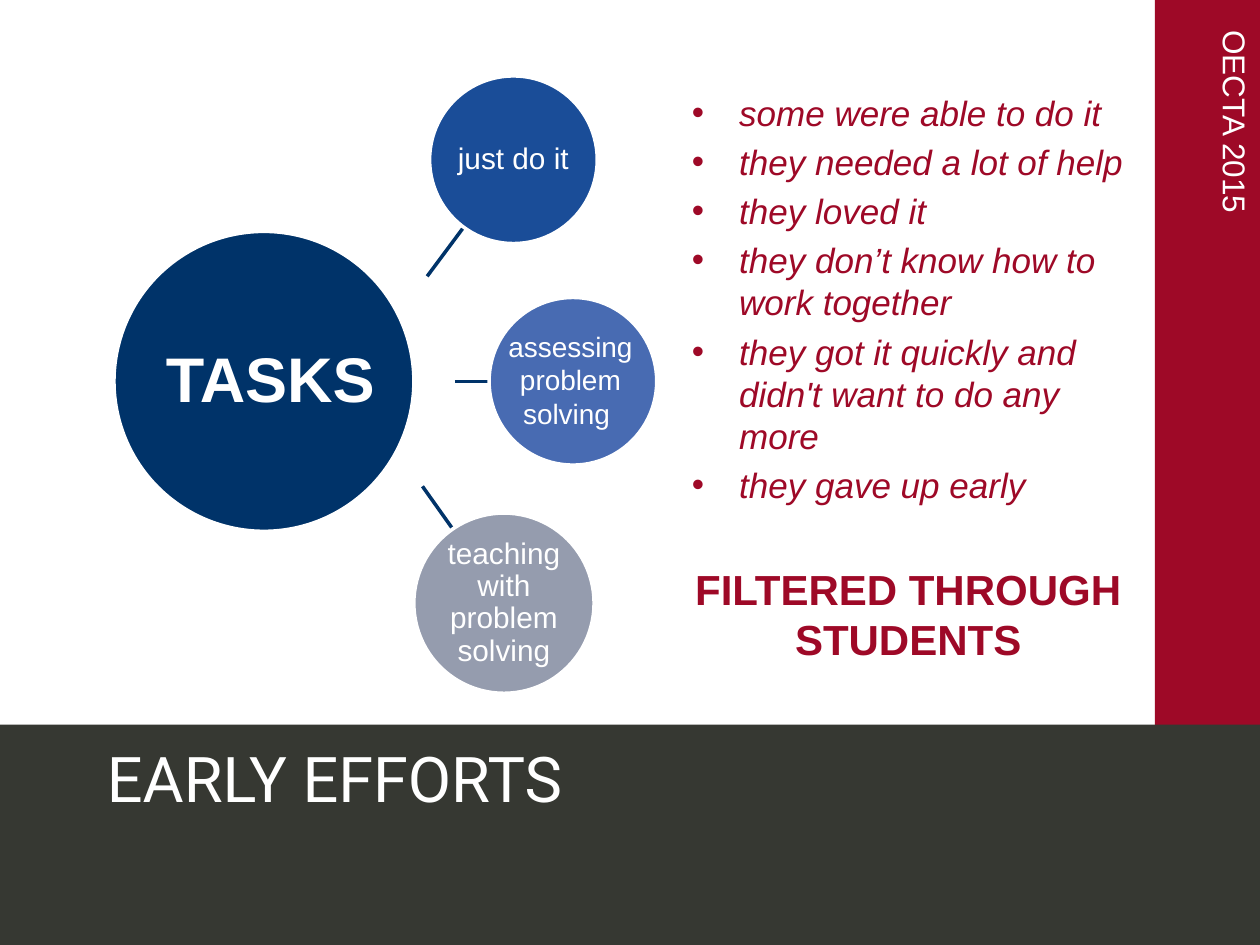
"""Build the "Early efforts" slide: a task hub with three satellites and a bullet list."""
from dataclasses import dataclass, field
from typing import Any, Optional

from lxml import etree
from pptx import Presentation
from pptx.dml.color import RGBColor
from pptx.enum.shapes import MSO_CONNECTOR, MSO_SHAPE
from pptx.enum.text import MSO_ANCHOR, PP_ALIGN
from pptx.oxml.ns import qn
from pptx.util import Pt

RECTANGLE, OVAL = MSO_SHAPE.RECTANGLE, MSO_SHAPE.OVAL
STRAIGHT = MSO_CONNECTOR.STRAIGHT
TOP, MIDDLE = MSO_ANCHOR.TOP, MSO_ANCHOR.MIDDLE
LEFT, CENTER = PP_ALIGN.LEFT, PP_ALIGN.CENTER

WHITE = RGBColor(0xFF, 0xFF, 0xFF)
CRIMSON = RGBColor(0x9E, 0x09, 0x27)
CHARCOAL = RGBColor(0x36, 0x38, 0x32)
NAVY = RGBColor(0x00, 0x33, 0x69)
ROYAL = RGBColor(0x1A, 0x4D, 0x98)
STEEL = RGBColor(0x48, 0x6B, 0xB2)
GREY = RGBColor(0x95, 0x9C, 0xAE)

INDENT = 27


@dataclass
class Line:
    text: str
    size: float
    color: RGBColor = WHITE
    name: str = "Arial"
    bold: bool = False
    italic: bool = False
    bullet: bool = False
    layout: dict[str, Any] = field(default_factory=dict)


@dataclass
class Label:
    left: float
    top: float
    width: float
    height: float
    lines: list[Line]
    anchor: Any = TOP
    inset: float = 7.2
    rotation: float = 0


@dataclass
class Circle:
    left: float
    top: float
    diameter: float
    fill: RGBColor
    text: Optional[str] = None


@dataclass
class Spoke:
    x1: float
    y1: float
    x2: float
    y2: float


CIRCLES = [
    Circle(65.1, 132.2, 171.4, NAVY),
    Circle(245.5, 43.4, 95.8, ROYAL, "just do it"),
    Circle(279.5, 170, 95.8, STEEL),
    Circle(236.5, 293.2, 103, GREY, "teaching with problem solving"),
]
SPOKES = [
    Spoke(241.4, 277.9, 258.3, 301.7),
    Spoke(259.9, 218, 279.2, 218),
    Spoke(244.1, 157.9, 265, 129.8),
]
REMARKS = [
    "some were able to do it",
    "they needed a lot of help",
    "they loved it",
    "they don’t know how to work together",
    "they got it quickly and didn't want to do any more",
    "they gave up early",
]
REMARK_LINES = [
    Line(remark, 20, CRIMSON, italic=True, bullet=True,
         layout={"space_before": Pt(4 if index else 0)})
    for index, remark in enumerate(REMARKS)
]
CONCLUSION = Line("FILTERED THROUGH STUDENTS", 24, CRIMSON, bold=True,
                  layout={"alignment": CENTER, "space_before": Pt(33.2)})
LABELS = [
    Label(565.2, 126, 281.5, 28.8, [Line("OECTA 2015", 18)], inset=17.6, rotation=90),
    Label(54, 414.5, 642.2, 59.8, [Line("EARLY EFFORTS", 36, name="Roboto")], MIDDLE),
    Label(87.8, 190.5, 141.8, 51.1, [Line("TASKS", 36, bold=True)]),
    Label(388.3, 49, 261.4, 377.3, REMARK_LINES + [CONCLUSION]),
    Label(269.5, 184.7, 113, 65.5,
          [Line("assessing problem solving ", 16, layout={"alignment": CENTER})]),
]


def set_values(target: Any, values: dict[str, Any]) -> None:
    """Set each named attribute on the target."""
    for key, value in values.items():
        setattr(target, key, value)


def add_bullet(para: Any, color: RGBColor) -> None:
    """Give the paragraph a coloured bullet with a hanging indent."""
    properties = para._p.get_or_add_pPr()
    properties.set("marL", str(Pt(INDENT)))
    properties.set("indent", str(-Pt(INDENT)))
    holder = etree.SubElement(properties, qn("a:buClr"))
    etree.SubElement(holder, qn("a:srgbClr")).set("val", str(color))
    etree.SubElement(properties, qn("a:buFont")).set("typeface", "Arial")
    etree.SubElement(properties, qn("a:buChar")).set("char", "•")


def write_lines(frame: Any, lines: list[Line]) -> None:
    """Write one paragraph per line into the text frame."""
    for index, line in enumerate(lines):
        para = frame.add_paragraph() if index else frame.paragraphs[0]
        if line.bullet:
            add_bullet(para, line.color)
        set_values(para, {"alignment": LEFT, **line.layout})
        span = para.add_run()
        span.text = line.text
        set_values(span.font, {"name": line.name, "size": Pt(line.size),
                               "bold": line.bold, "italic": line.italic})
        span.font.color.rgb = line.color


def add_panel(page: Any, left: float, top: float, width: float, height: float,
              fill: RGBColor, kind: Any = RECTANGLE) -> Any:
    """Add a filled shape without outline or shadow."""
    panel = page.shapes.add_shape(kind, Pt(left), Pt(top), Pt(width), Pt(height))
    panel.shadow.inherit = False
    panel.fill.solid()
    panel.fill.fore_color.rgb = fill
    panel.line.fill.background()
    return panel


def add_circle(page: Any, circle: Circle) -> None:
    """Add a white-rimmed circle with its optional text."""
    shape = add_panel(page, circle.left, circle.top, circle.diameter,
                      circle.diameter, circle.fill, OVAL)
    shape.line.color.rgb = WHITE
    shape.line.width = Pt(2)
    if circle.text:
        margins = dict.fromkeys(
            ("margin_left", "margin_top", "margin_right", "margin_bottom"), Pt(0.8))
        set_values(shape.text_frame,
                   {"word_wrap": True, "vertical_anchor": MIDDLE, **margins})
        layout = {"alignment": CENTER, "line_spacing": 0.9}
        write_lines(shape.text_frame, [Line(circle.text, 17, layout=layout)])


def add_spoke(page: Any, spoke: Spoke) -> None:
    """Add a straight line between the hub and a satellite."""
    connector = page.shapes.add_connector(
        STRAIGHT, Pt(spoke.x1), Pt(spoke.y1), Pt(spoke.x2), Pt(spoke.y2))
    connector.line.color.rgb = NAVY
    connector.line.width = Pt(2)
    etree.SubElement(connector._element.spPr, qn("a:effectLst"))


def add_label(page: Any, label: Label) -> None:
    """Add a wrapped text box."""
    box = page.shapes.add_textbox(
        Pt(label.left), Pt(label.top), Pt(label.width), Pt(label.height))
    box.rotation = label.rotation
    set_values(box.text_frame, {"word_wrap": True, "vertical_anchor": label.anchor,
                                "margin_left": Pt(label.inset)})
    write_lines(box.text_frame, label.lines)


def main() -> None:
    """Build and save the deck."""
    deck = Presentation()
    set_values(deck, {"slide_width": Pt(720), "slide_height": Pt(540)})
    page = deck.slides.add_slide(deck.slide_layouts[6])
    add_panel(page, 660, 0, 60, 540, CRIMSON)
    add_panel(page, 0, 414, 720, 126, CHARCOAL)
    for spoke in SPOKES:
        add_spoke(page, spoke)
    for circle in CIRCLES:
        add_circle(page, circle)
    for label in LABELS:
        add_label(page, label)
    deck.save("out.pptx")


if __name__ == "__main__":
    main()
